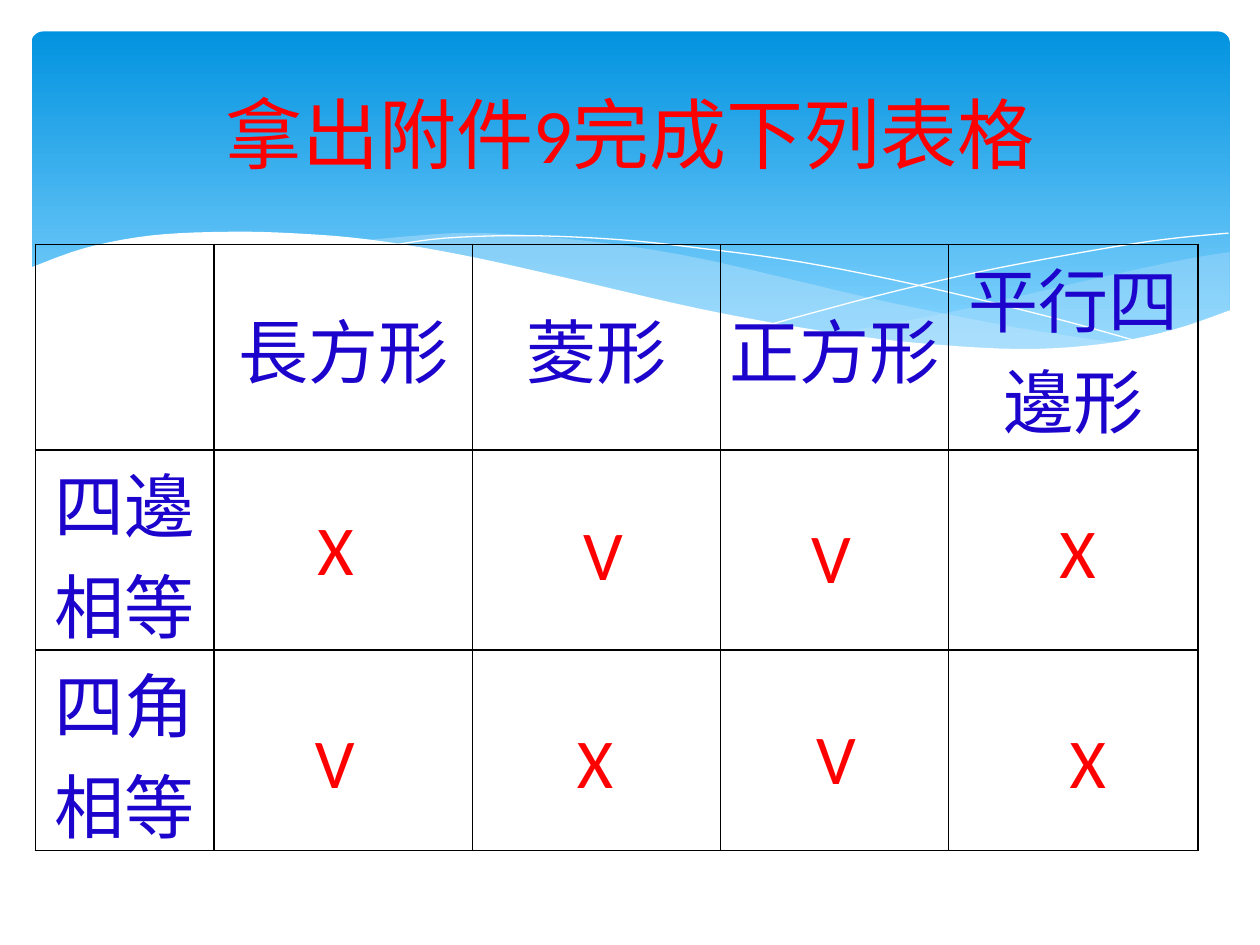
from pptx import Presentation
from pptx.dml.color import RGBColor
from pptx.enum.shapes import MSO_SHAPE as Shape
from pptx.enum.text import MSO_ANCHOR as Anchor, MSO_AUTO_SIZE as Auto, PP_ALIGN as Align
from pptx.oxml import parse_xml
from pptx.oxml.ns import nsdecls, qn
from pptx.util import Inches, Pt
from lxml.etree import SubElement

WIDE, HIGH = 10, 7.5
RED, BLUE, PALE, WHITE = "FF0000", "1C04CC", "C6E7FC", "FFFFFF"
LATIN, HAN = "Calibri", "Noto Sans CJK TC"

# Waves: anchors of smooth edges, in inches
RIGHT = [
    [(9.76, 2), (9.35, 2.07), (8.61, 2.23), (7.53, 2.48), (6.61, 2.65)],
    [(6.61, 2.65), (7.19, 2.72), (7.69, 2.77), (8.14, 2.78), (8.63, 2.75),
     (9.13, 2.67), (9.49, 2.57), (9.76, 2.47)],
]
MIDDLE = [
    [(8.93, 2.73), (8.07, 2.6), (7.06, 2.4), (6.29, 2.22), (5.55, 2.05),
     (4.89, 1.94), (4.2, 1.87), (3.61, 1.85), (2.86, 1.91)],
    [(2.86, 1.91), (3.62, 2.03), (4.49, 2.22), (5.3, 2.4), (6.18, 2.58),
     (6.95, 2.7), (7.61, 2.77), (8.18, 2.78), (8.93, 2.73)],
]
FALL = [[(3.09, 1.95), (3.53, 1.89), (4.16, 1.87), (4.89, 1.9), (5.56, 1.97),
         (6.36, 2.08), (7.27, 2.26), (8.31, 2.51), (9.07, 2.72)]]
RISE = [[(6.13, 2.57), (6.95, 2.35), (7.76, 2.16), (8.66, 1.99),
         (9.24, 1.9), (9.75, 1.85)]]
FRONT = [
    [(9.77, 2.46), (9.3, 2.62), (8.75, 2.73), (8.09, 2.77), (7.26, 2.72),
     (6.48, 2.62), (5.55, 2.45), (4.47, 2.2), (3.65, 2.02), (2.92, 1.9),
     (2.3, 1.85), (1.77, 1.84), (1.19, 1.87), (0.67, 1.97), (0.23, 2.13)],
    [(0.23, 3.29), (9.77, 3.29)],
]

COLS, ROWS = [1.42, 2.05, 1.97, 1.81, 1.98], [1.63, 1.59, 1.59]
HEADS = ["長方形", "菱形", "正方形", "平行四邊形"]
SIDES = ["四邊相等", "四角相等"]
MARKS = [
    ("X", 2.42, 3.96), ("V", 4.53, 4), ("V", 6.34, 4.03), ("X", 8.31, 3.99),
    ("V", 2.4, 5.65), ("X", 4.48, 5.65), ("V", 6.38, 5.62), ("X", 8.39, 5.65),
]


def color(code):
    return RGBColor.from_string(code)


def write(frame, text, size, code, font, align=None):
    para = frame.paragraphs[0]
    para.alignment = align
    run = para.add_run()
    run.text = text
    run.font.size, run.font.name = Pt(size), font
    run.font.color.rgb = color(code)
    SubElement(run.font._element, qn("a:ea"), typeface=HAN)


def label(slide, box, text, size, align=None):
    frame = slide.shapes.add_textbox(*map(Inches, box)).text_frame
    frame.word_wrap = True
    write(frame, text, size, RED, LATIN, align)
    return frame


def smooth(nodes, steps=5):
    """Points of a Catmull-Rom curve through the nodes."""
    ends = [nodes[0], *nodes, nodes[-1]]
    for a, b, c, d in zip(ends, ends[1:], ends[2:], ends[3:]):
        for t in (i / steps for i in range(steps)):
            yield tuple(
                q + t / 2 * (r - p + t * (2 * p - 5 * q + 4 * r - s
                                          + t * (3 * (q - r) + s - p)))
                for p, q, r, s in zip(a, b, c, d))
    yield nodes[-1]


def wave(slide, edges, fill=None, alpha=100):
    pts = [(Inches(x), Inches(y)) for edge in edges for x, y in smooth(edge)]
    pen = slide.shapes.build_freeform(*pts[0])
    pen.add_line_segments(pts[1:], close=bool(fill))
    shape = pen.convert_to_shape()
    shape.shadow.inherit = False
    if fill:
        shape.fill.solid()
        shape.fill.fore_color.rgb = color(fill)
        shape.line.fill.background()
        if alpha < 100:
            tint = shape._element.spPr.find(".//" + qn("a:srgbClr"))
            SubElement(tint, qn("a:alpha"), val=str(alpha * 1000))
    else:
        shape.fill.background()
        shape.line.color.rgb = color(WHITE)
        shape.line.width = 0


def banner(slide):
    box = map(Inches, (0.25, 0.25, 9.51, 2.7))
    shape = slide.shapes.add_shape(Shape.ROUNDED_RECTANGLE, *box)
    shape.adjustments[0] = 0.034
    shape.shadow.inherit = False
    shape.line.fill.background()
    shape.fill.gradient()
    shape.fill.gradient_angle = 270
    stops = zip(shape.fill.gradient_stops, (0, 0.9), ("0293E0", "83D3FE"))
    for stop, place, code in stops:
        stop.position = place
        stop.color.rgb = color(code)


def border(cell):
    props = cell._tc.get_or_add_tcPr()
    for i, side in enumerate(("lnL", "lnR", "lnT", "lnB")):
        props.insert(i, parse_xml(
            f'<a:{side} {nsdecls("a")} w="12700"><a:solidFill>'
            f'<a:srgbClr val="000000"/></a:solidFill></a:{side}>'))


def grid(slide):
    box = map(Inches, (0.28, 1.94, sum(COLS), sum(ROWS)))
    table = slide.shapes.add_table(len(ROWS), len(COLS), *box).table
    table.first_row = table.horz_banding = False
    for col, width in zip(table.columns, COLS):
        col.width = Inches(width)
    for row, height in zip(table.rows, ROWS):
        row.height = Inches(height)
    texts = {(0, i): head for i, head in enumerate(HEADS, 1)}
    texts.update({(i, 0): side for i, side in enumerate(SIDES, 1)})
    for r in range(len(ROWS)):
        for c in range(len(COLS)):
            cell = table.cell(r, c)
            cell.fill.background()
            border(cell)
            if (r, c) in texts:
                cell.vertical_anchor = Anchor.MIDDLE
                cell.margin_left = cell.margin_right = cell.margin_top = Inches(0.01)
                cell.margin_bottom = 0
                write(cell.text_frame, texts[r, c], 40, BLUE, HAN, Align.CENTER)


def main():
    deck = Presentation()
    deck.slide_width, deck.slide_height = Inches(WIDE), Inches(HIGH)
    slide = deck.slides.add_slide(deck.slide_layouts[6])

    # Sky and waves
    banner(slide)
    wave(slide, RIGHT, PALE, 29)
    wave(slide, MIDDLE, PALE, 40)
    wave(slide, FALL)
    wave(slide, RISE)
    wave(slide, FRONT, WHITE)

    # Title
    box = (0.05 * WIDE, 0.37, 0.9 * WIDE, 1.37)
    title = label(slide, box, "拿出附件9完成下列表格", 44, Align.CENTER)
    title.vertical_anchor = Anchor.MIDDLE

    # Table and answers
    grid(slide)
    for text, left, top in MARKS:
        frame = label(slide, (left, top, 0.47, 0.77), text, 40)
        frame.auto_size = Auto.SHAPE_TO_FIT_TEXT

    deck.save("out.pptx")


if __name__ == "__main__":
    main()
